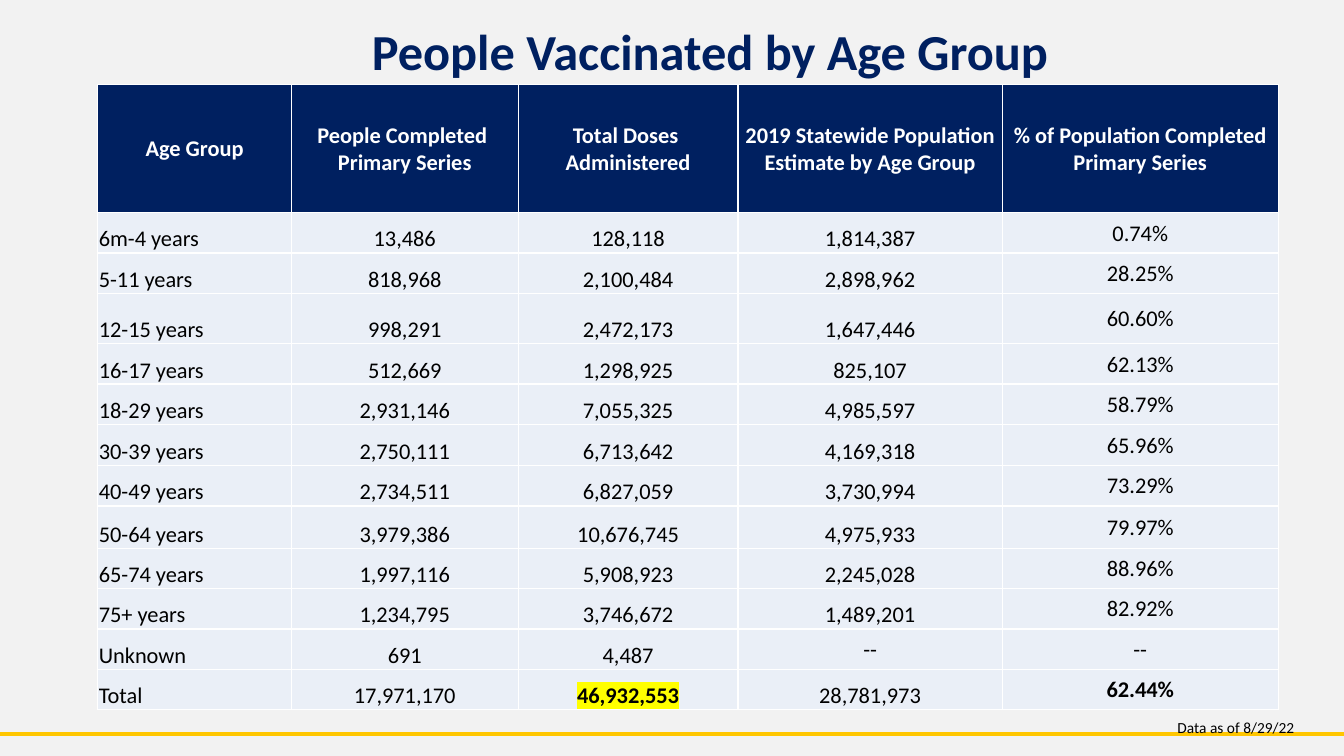
from dataclasses import dataclass

from lxml.etree import SubElement
from pptx import Presentation
from pptx.dml.color import RGBColor
from pptx.enum.shapes import MSO_CONNECTOR
from pptx.enum.text import MSO_ANCHOR as Anchor, PP_ALIGN as Align
from pptx.oxml import parse_xml
from pptx.oxml.ns import nsdecls, qn
from pptx.util import Inches, Pt


@dataclass(frozen=True)
class Theme:
    font: str = "Calibri"
    background: str = "F2F2F2"
    navy: str = "002060"
    gold: str = "FFC600"
    white: str = "FFFFFF"
    black: str = "000000"
    row_fill: str = "EAEFF7"
    highlight: str = "FFFF00"
    title_size: int = 36
    table_size: int = 16
    note_size: int = 11


HEADERS = [
    "Age Group",
    "People Completed \nPrimary Series",
    "Total Doses \nAdministered",
    "2019 Statewide Population Estimate by Age Group",
    "% of Population Completed Primary Series",
]
AGE_ROWS = [
    ["6m-4 years", "13,486", "128,118", "1,814,387", "0.74%"],
    ["5-11 years", "818,968", "2,100,484", "2,898,962", "28.25%"],
    ["12-15 years", "998,291", "2,472,173", "1,647,446", "60.60%"],
    ["16-17 years", "512,669", "1,298,925", "825,107", "62.13%"],
    ["18-29 years", "2,931,146", "7,055,325", "4,985,597", "58.79%"],
    ["30-39 years", "2,750,111", "6,713,642", "4,169,318", "65.96%"],
    ["40-49 years", "2,734,511", "6,827,059", "3,730,994", "73.29%"],
    ["50-64 years", "3,979,386", "10,676,745", "4,975,933", "79.97%"],
    ["65-74 years", "1,997,116", "5,908,923", "2,245,028", "88.96%"],
    ["75+ years", "1,234,795", "3,746,672", "1,489,201", "82.92%"],
    ["Unknown", "691", "4,487", "--", "--"],
    ["Total", "17,971,170", "46,932,553", "28,781,973", "62.44%"],
]
COLUMN_WIDTHS = [1.92, 2.25, 2.18, 2.62, 2.74]
ROW_HEIGHTS = [1.27, 0.4, 0.4, 0.5, 0.4, 0.4, 0.41, 0.4, 0.42, 0.4, 0.4, 0.4, 0.4]
BOLD_VALUES = {"46,932,553", "62.44%"}
HIGHLIGHTED_VALUE = "46,932,553"


class SlideBuilder:
    def __init__(self, slide, theme):
        self.slide = slide
        self.theme = theme
        fill = slide.background.fill
        fill.solid()
        fill.fore_color.rgb = RGBColor.from_string(theme.background)

    def add_text(self, frame, text, size, color, align=Align.LEFT, bold=False):
        """Fill a text frame, one paragraph for each line of text."""
        frame.word_wrap = True
        for index, line in enumerate(text.split("\n")):
            paragraph = frame.add_paragraph() if index else frame.paragraphs[0]
            paragraph.alignment = align
            run = paragraph.add_run()
            run.text = line
            run.font.size = Pt(size)
            run.font.bold = bold
            run.font.color.rgb = RGBColor.from_string(color)
            run.font.name = self.theme.font

    def rule(self, left, right, y, color, width):
        line = self.slide.shapes.add_connector(
            MSO_CONNECTOR.STRAIGHT, Inches(left), Inches(y), Inches(right), Inches(y))
        line.line.color.rgb = RGBColor.from_string(color)
        line.line.width = Pt(width)
        SubElement(line._element.spPr, qn("a:effectLst"))

    def title(self, text, left, top, width, height):
        shape = self.slide.shapes.title
        shape.left, shape.top = Inches(left), Inches(top)
        shape.width, shape.height = Inches(width), Inches(height)
        shape.text_frame.vertical_anchor = Anchor.TOP
        self.add_text(shape.text_frame, text, self.theme.title_size,
                      self.theme.navy, Align.CENTER, bold=True)

    def note(self, text, left, top, width, height):
        box = self.slide.shapes.add_textbox(
            Inches(left), Inches(top), Inches(width), Inches(height))
        self.add_text(box.text_frame, text, self.theme.note_size, self.theme.black)

    def table(self, rows, left, top, widths, heights):
        table = self.slide.shapes.add_table(
            len(rows), len(widths), Inches(left), Inches(top),
            Inches(sum(widths)), Inches(sum(heights))).table
        for column, width in zip(table.columns, widths):
            column.width = Inches(width)
        for row, height in zip(table.rows, heights):
            row.height = Inches(height)
        for row_index, values in enumerate(rows):
            for column_index, value in enumerate(values):
                self.cell(table.cell(row_index, column_index), value,
                          is_header=row_index == 0,
                          is_first=column_index == 0,
                          is_last=column_index == len(widths) - 1)

    def cell(self, cell, value, is_header, is_first, is_last):
        theme = self.theme
        cell.margin_left = cell.margin_right = cell.margin_top = Inches(0.01)
        cell.margin_bottom = 0
        in_middle = is_header or is_last or value == "--"
        cell.vertical_anchor = Anchor.MIDDLE if in_middle else Anchor.BOTTOM
        cell.fill.solid()
        cell.fill.fore_color.rgb = RGBColor.from_string(
            theme.navy if is_header else theme.row_fill)
        self.cell_borders(cell)
        self.add_text(cell.text_frame, value, theme.table_size,
                      theme.white if is_header else theme.black,
                      Align.LEFT if is_first and not is_header else Align.CENTER,
                      bold=is_header or value in BOLD_VALUES)
        if value == HIGHLIGHTED_VALUE:
            self.highlight(cell.text_frame.paragraphs[0].runs[0])

    def cell_borders(self, cell):
        properties = cell._tc.get_or_add_tcPr()
        for index, side in enumerate(("lnL", "lnR", "lnT", "lnB")):
            properties.insert(index, parse_xml(
                f'<a:{side} {nsdecls("a")} w="{Pt(1)}"><a:solidFill>'
                f'<a:srgbClr val="{self.theme.white}"/></a:solidFill></a:{side}>'))

    def highlight(self, run):
        text_fill = run._r.get_or_add_rPr().find(qn("a:solidFill"))
        text_fill.addnext(parse_xml(
            f'<a:highlight {nsdecls("a")}>'
            f'<a:srgbClr val="{self.theme.highlight}"/></a:highlight>'))


def main():
    presentation = Presentation()
    presentation.slide_width = Inches(13.33)
    presentation.slide_height = Inches(7.5)
    title_only = presentation.slide_layouts[5]
    theme = Theme()
    builder = SlideBuilder(presentation.slides.add_slide(title_only), theme)
    builder.rule(0, 13.33, 7.28, theme.gold, 3)
    builder.table([HEADERS] + AGE_ROWS, 0.97, 0.84, COLUMN_WIDTHS, ROW_HEIGHTS)
    builder.title("People Vaccinated by Age Group ", 2.3, 0.15, 9.6, 0.71)
    builder.note("Data as of 8/29/22", 11.58, 7.07, 1.87, 0.29)
    presentation.save("out.pptx")


if __name__ == "__main__":
    main()
